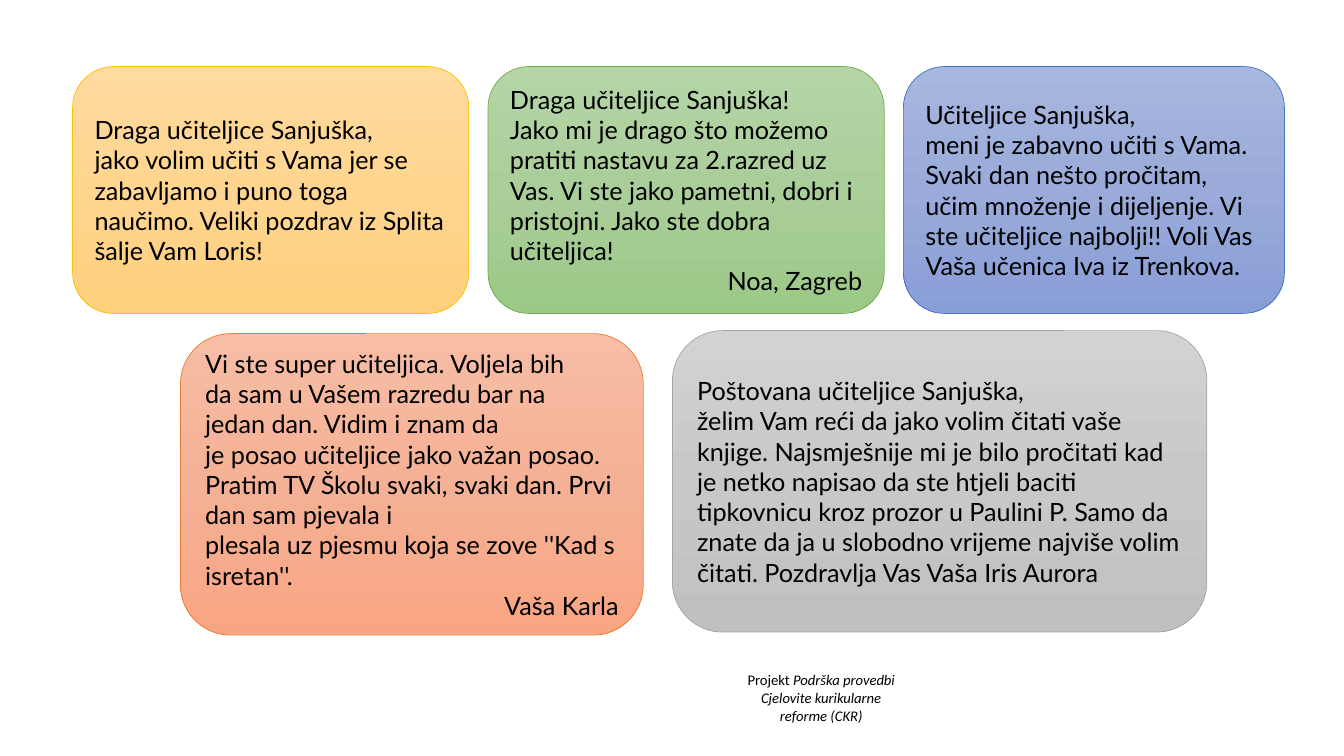
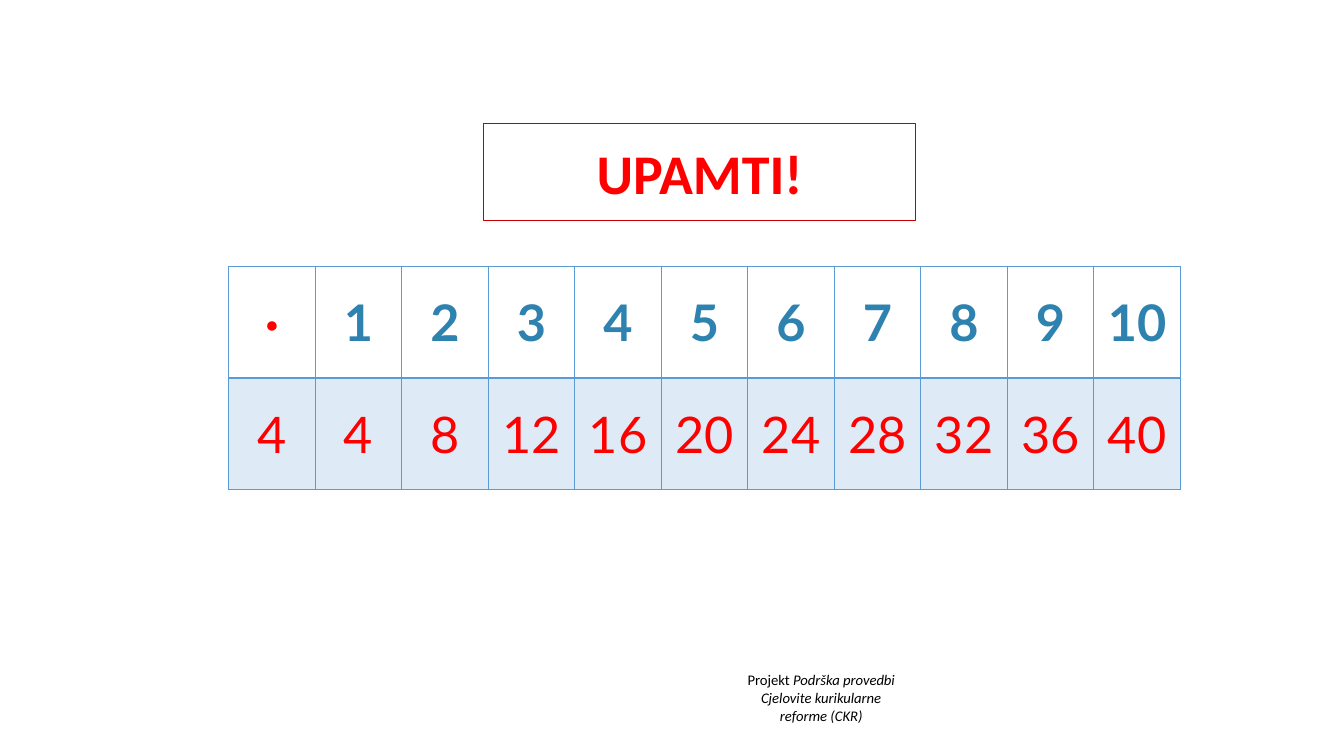
from copy import deepcopy

from lxml import etree
from pptx import Presentation, util as u
from pptx.dml.color import RGBColor
from pptx.enum import shapes, text
from pptx.oxml.ns import qn

HARD_SPACE = chr(160)
BODY_FONT, LABEL_FONT = "Lato", "Calibri"
BLACK, WHITE, RED, DARK_RED = "000000", "FFFFFF", "FF0000", "C00000"
HEADER_BLUE, GRID_BLUE, PALE_BLUE = "2E82AF", "5B9BD5", "DEEBF7"
LEFT, CENTER, RIGHT = text.PP_ALIGN.LEFT, text.PP_ALIGN.CENTER, text.PP_ALIGN.RIGHT


def unbroken(*chunks):
    return " ".join(chunk.replace(" ", HARD_SPACE) for chunk in chunks)


FOOTER = [
    [("Projekt ", False), ("Podrška provedbi", True)],
    [("Cjelovite kurikularne", True)],
    [("reforme (CKR)", True)],
]

CARD_ROWS = [
    {"left": 0.72, "gap": 0.19, "height": 2.45, "cards": [
        {"top": 0.66, "width": 3.93, "line": "FFC000",
         "stops": ("FFDB9E", "FFD590", "FFD07C"),
         "lines": ["Draga učiteljice Sanjuška,",
                   "jako volim učiti s Vama jer se zabavljamo i puno toga naučimo. "
                   "Veliki pozdrav iz Splita šalje Vam Loris!"]},
        {"top": 0.66, "width": 3.93, "line": "70AD47",
         "stops": ("B5D5A7", "AACE9A", "9CC987"),
         "lines": ["Draga učiteljice Sanjuška!",
                   "Jako mi je drago što možemo pratiti nastavu za 2.razred uz Vas. "
                   "Vi ste jako pametni, dobri i pristojni. Jako ste dobra učiteljica!"],
         "signature": "Noa, Zagreb"},
        {"top": 0.66, "width": 3.78, "line": "4472C4",
         "stops": ("A8B7DF", "9AABD9", "889ED7"),
         "lines": ["Učiteljice Sanjuška,",
                   "meni je zabavno učiti s Vama. Svaki dan nešto pročitam, učim množenje "
                   "i dijeljenje. Vi ste učiteljice najbolji!! Voli Vas Vaša učenica Iva "
                   "iz Trenkova."]},
    ]},
    {"left": 1.79, "gap": 0.29, "height": 2.99, "cards": [
        {"top": 3.31, "width": 4.59, "line": "ED7D31",
         "stops": ("F7BDA5", "F5B196", "F8A582"),
         "lines": [unbroken("Vi ste super učiteljica. Voljela bih",
                            "da sam u Vašem razredu bar na"),
                   unbroken("jedan dan. Vidim i znam da",
                            "je posao učiteljice jako važan posao."),
                   unbroken("Pratim TV Školu svaki, svaki dan. Prvi dan sam pjevala i",
                            "plesala uz pjesmu koja se zove ''Kad sisretan''.")],
         "signature": unbroken("Vaša Karla")},
        {"top": 3.28, "width": 5.3, "line": "A5A5A5",
         "stops": ("D2D2D2", "C8C8C8", "C0C0C0"),
         "lines": ["Poštovana učiteljice Sanjuška,",
                   "želim Vam reći da jako volim čitati vaše knjige. Najsmješnije mi je "
                   "bilo pročitati kad je netko napisao da ste htjeli baciti tipkovnicu "
                   "kroz prozor u Paulini P. Samo da znate da ja u slobodno vrijeme "
                   "najviše volim čitati. Pozdravlja Vas Vaša Iris Aurora"]},
    ]},
]

TITLE = "UPAMTI!"
FACTOR = 4
MULTIPLIERS = range(1, 11)
TIMES_TABLE = [
    ["∙"] + [str(n) for n in MULTIPLIERS],
    [str(FACTOR)] + [str(FACTOR * n) for n in MULTIPLIERS],
]


def rgb(value):
    return RGBColor.from_string(value)


def place(left, top, width, height):
    return [u.Inches(length) for length in (left, top, width, height)]


def add_span(para, words, size, color=BLACK, font=BODY_FONT, bold=False, italic=False):
    span = para.add_run()
    span.text = words
    span.font.name, span.font.size = font, u.Pt(size)
    span.font.bold, span.font.italic = bold, italic
    span.font.color.rgb = rgb(color)


def add_para(frame, index, align):
    para = frame.add_paragraph() if index else frame.paragraphs[0]
    para.alignment = align
    return para


def add_page(deck, layout):
    page = deck.slides.add_slide(deck.slide_layouts.get_by_name(layout))
    frame = page.shapes.add_textbox(*place(6.99, 6.61, 2.31, 0.63)).text_frame
    frame.word_wrap = True
    for index, spans in enumerate(FOOTER):
        para = add_para(frame, index, CENTER)
        for words, italic in spans:
            add_span(para, words, 10.5, font=LABEL_FONT, italic=italic)
    return page


def fill_gradient(box, colors):
    box.fill.gradient()
    box.fill.gradient_angle = 270
    stop_list = box.element.spPr.find(".//" + qn("a:gsLst"))
    stop_list.append(deepcopy(stop_list[0]))
    for index, (stop, color) in enumerate(zip(box.fill.gradient_stops, colors)):
        stop.position = index / 2
        stop.color.rgb = rgb(color)


def add_card(page, card, left, height):
    box = page.shapes.add_shape(shapes.MSO_SHAPE.ROUNDED_RECTANGLE,
                                *place(left, card["top"], card["width"], height))
    box.shadow.inherit = False
    fill_gradient(box, card["stops"])
    box.line.color.rgb = rgb(card["line"])
    box.line.width = u.Pt(0.5)
    frame = box.text_frame
    frame.word_wrap = True
    frame.vertical_anchor = text.MSO_ANCHOR.MIDDLE
    lines = [(line, LEFT) for line in card["lines"]]
    if "signature" in card:
        lines.append((card["signature"], RIGHT))
    for index, (line, align) in enumerate(lines):
        add_span(add_para(frame, index, align), line, 18)


def add_letters(deck):
    page = add_page(deck, "Blank")
    for row in CARD_ROWS:
        left = row["left"]
        for card in row["cards"]:
            add_card(page, card, left, row["height"])
            left += card["width"] + row["gap"]


def set_borders(cell, color, points):
    properties = cell._tc.get_or_add_tcPr()
    for side in ("lnL", "lnR", "lnT", "lnB"):
        line = etree.SubElement(properties, qn("a:" + side), w=str(u.Pt(points)))
        fill = etree.SubElement(line, qn("a:solidFill"))
        etree.SubElement(fill, qn("a:srgbClr"), val=color)


def add_times_table(page):
    size = len(TIMES_TABLE), len(TIMES_TABLE[0])
    table = page.shapes.add_table(*size, *place(2.27, 2.64, 9.44, 2.22)).table
    table.first_row = table.horz_banding = False
    for r, values in enumerate(TIMES_TABLE):
        for c, value in enumerate(values):
            cell = table.cell(r, c)
            set_borders(cell, GRID_BLUE, 1)
            cell.fill.solid()
            cell.fill.fore_color.rgb = rgb(PALE_BLUE if r else WHITE)
            cell.vertical_anchor = text.MSO_ANCHOR.MIDDLE
            color = HEADER_BLUE if r == 0 and c else RED
            add_span(add_para(cell.text_frame, 0, CENTER), value, 36, color, bold=r == 0)


def add_multiplication(deck):
    page = add_page(deck, "Title Only")
    title = page.shapes.title
    title.left, title.top, title.width, title.height = place(4.8, 1.23, 4.28, 0.96)
    title.line.color.rgb = rgb(DARK_RED)
    title.line.width = u.Pt(0.75)
    title.text_frame.vertical_anchor = text.MSO_ANCHOR.MIDDLE
    para = add_para(title.text_frame, 0, CENTER)
    add_span(para, TITLE, 40, RED, LABEL_FONT, bold=True)
    add_times_table(page)


def main():
    deck = Presentation()
    deck.slide_width, deck.slide_height = u.Inches(13.33), u.Inches(7.5)
    add_letters(deck)
    add_multiplication(deck)
    deck.save("out.pptx")


if __name__ == "__main__":
    main()
